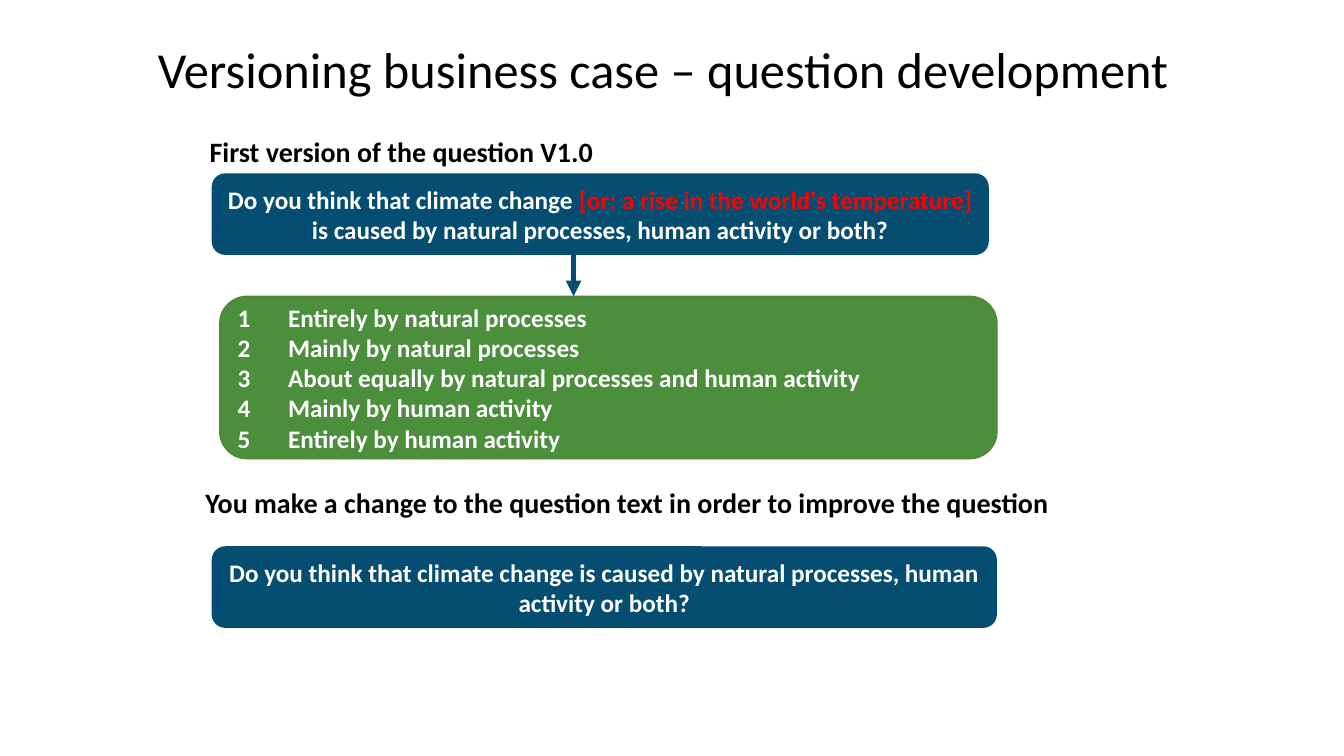
from lxml import etree
from pptx import Presentation
from pptx.dml.color import RGBColor
from pptx.enum.shapes import MSO_CONNECTOR, MSO_SHAPE
from pptx.enum.text import MSO_ANCHOR, MSO_AUTO_SIZE, PP_ALIGN
from pptx.oxml.ns import qn
from pptx.util import Pt

ROUND = MSO_SHAPE.ROUNDED_RECTANGLE
LINE = MSO_CONNECTOR.STRAIGHT
MID, BASE = MSO_ANCHOR.MIDDLE, MSO_ANCHOR.BOTTOM
LEFT, CENTER = PP_ALIGN.LEFT, PP_ALIGN.CENTER
GROW = MSO_AUTO_SIZE.SHAPE_TO_FIT_TEXT
HUES = {"black": "000000", "white": "FFFFFF", "red": "FF0000",
        "blue": "054E72", "green": "4B8E3C", "edge": "548235"}


def hue(name):
    return RGBColor.from_string(HUES[name])


def write(para, text, size, color, bold=True):
    run = para.add_run()
    run.text = text
    font = run.font
    font.name, font.size, font.bold = "Calibri", Pt(size), bold
    font.color.rgb = hue(color)


deck = Presentation()
deck.slide_width, deck.slide_height = Pt(960), Pt(540)
slide = deck.slides.add_slide(deck.slide_layouts[5])
shapes = slide.shapes

arrow = shapes.add_connector(LINE, Pt(409.7), Pt(153.4), Pt(409.7), Pt(211.7))
arrow.line.color.rgb = hue("blue")
arrow.line.width = Pt(3.75)
etree.SubElement(arrow.line._get_or_add_ln(), qn("a:tailEnd"), type="triangle")
etree.SubElement(arrow._element.spPr, qn("a:effectLst"))

title = shapes.title
title.left, title.top = Pt(35.3), Pt(-4.3)
title.width, title.height = Pt(877), Pt(79.2)
title.text_frame.vertical_anchor = BASE
head = title.text_frame.paragraphs[0]
head.alignment = CENTER
head.line_spacing = 0.9
write(head, "Versioning business case – question development", 36, "black", False)

labels = [
    (142.6, 92.2, 290.9, "First version of the question V1.0"),
    (139.7, 343.4, 635.8,
     "You make a change to the question text in order to improve the question"),
]
for left, top, width, text in labels:
    label = shapes.add_textbox(Pt(left), Pt(top), Pt(width), Pt(31.5))
    label.text_frame.word_wrap = False
    label.text_frame.auto_size = GROW
    write(label.text_frame.paragraphs[0], text, 20, "black")
label.fill.solid()
label.fill.fore_color.rgb = hue("white")

answers = [
    "Entirely by natural processes",
    "Mainly by natural processes",
    "About equally by natural processes and human activity",
    "Mainly by human activity",
    "Entirely by human activity",
]
first = [
    ("Do you think that climate change ", "white"),
    ("[or: a rise in the world's temperature] ", "red"),
    ("is caused by natural processes, human activity or both?", "white"),
]
second = [("Do you think that climate change is caused by natural processes, "
           "human activity or both?", "white")]
scale = [[(f"{num}\t{text}", "white")] for num, text in enumerate(answers, 1)]
boxes = [
    (157, 211.7, 555.1, 115.9, "green", "edge", LEFT, scale),
    (151.2, 123.8, 555.1, 58.3, "blue", None, CENTER, [first]),
    (151.2, 390.2, 560.9, 58.3, "blue", None, CENTER, [second]),
]
for left, top, width, height, fill, edge, align, paras in boxes:
    box = shapes.add_shape(ROUND, Pt(left), Pt(top), Pt(width), Pt(height))
    box.shadow.inherit = False
    box.fill.solid()
    box.fill.fore_color.rgb = hue(fill)
    if edge:
        box.line.color.rgb = hue(edge)
        box.line.width = Pt(1)
    else:
        box.line.fill.background()
    frame = box.text_frame
    frame.word_wrap = True
    frame.vertical_anchor = MID
    for i, runs in enumerate(paras):
        para = frame.add_paragraph() if i else frame.paragraphs[0]
        para.alignment = align
        for text, color in runs:
            write(para, text, 18, color)

deck.save("out.pptx")
